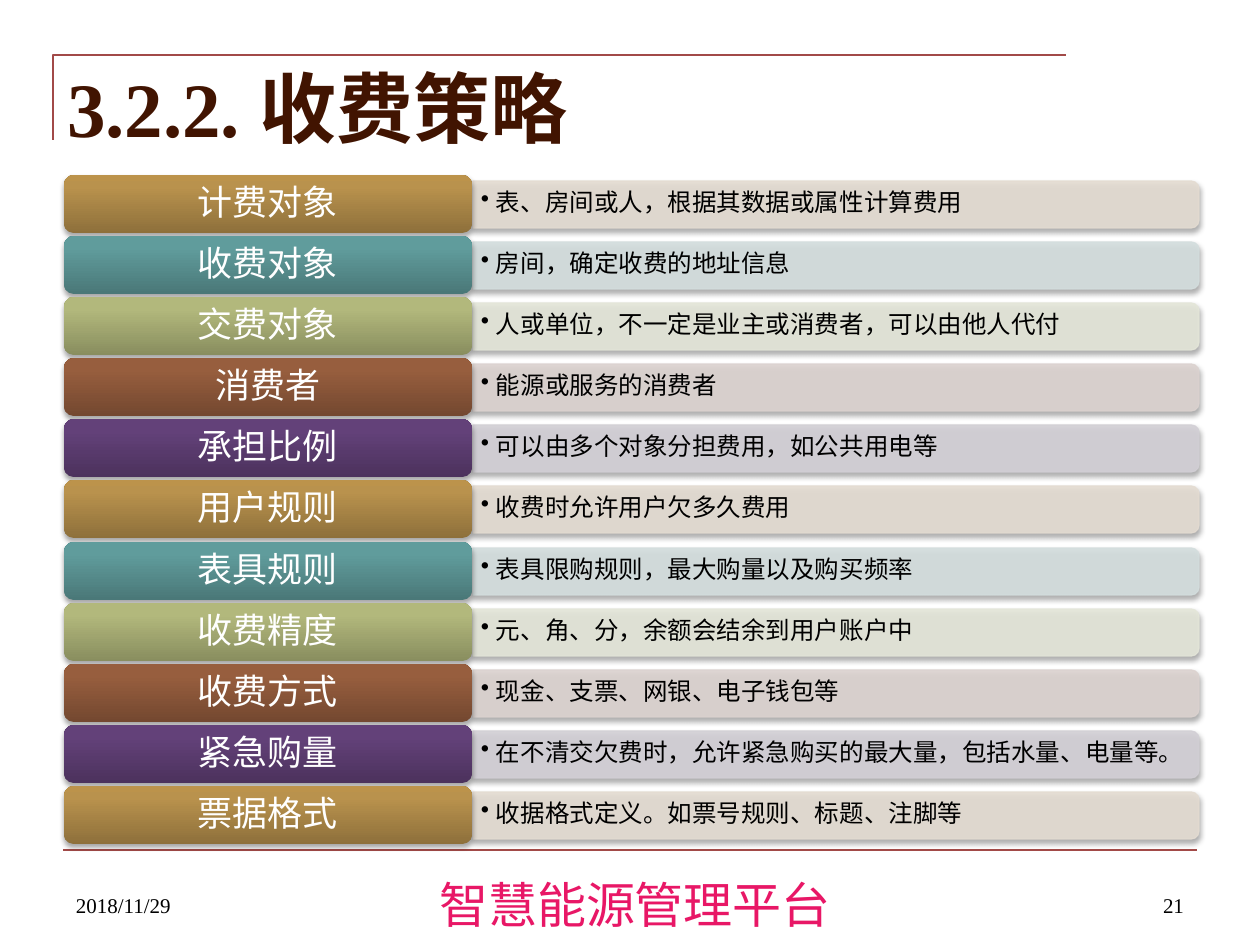
import pptx
import pptx.dml.color
import pptx.enum.shapes
import pptx.enum.text
import pptx.oxml
import pptx.oxml.ns
import pptx.util

EMU_PER_PX = 914400 / 126
SLIDE_WIDTH, SLIDE_HEIGHT = 1260, 945
FIRST_TOP, LAST_TOP = 175, 786
LABEL_LEFT, LABEL_WIDTH, LABEL_HEIGHT = 64, 408, 58
BAR_LEFT, BAR_WIDTH, BAR_HEIGHT, BAR_OFFSET = 473, 726, 47, 6

COLORS = {
    "rule": "A24A48", "title": "411401", "platform": "E81766",
    "black": "000000", "white": "FFFFFF",
}
THEMES = [
    {"bar": "E4DCD2", "label": {0: "8E703B", 80: "B9924D", 100: "BC934B"}},
    {"bar": "D4DEDE", "label": {0: "4A7878", 80: "609C9C", 100: "5F9E9E"}},
    {"bar": "E4E6D9", "label": {0: "898E5F", 80: "B2B87C", 100: "B4BA7B"}},
    {"bar": "DCD3D0", "label": {0: "744830", 80: "975E3E", 100: "995E3D"}},
    {"bar": "D3D0D6", "label": {0: "4C325D", 80: "634179", 100: "64417A"}},
]
STRATEGIES = [
    ("计费对象", "表、房间或人，根据其数据或属性计算费用"),
    ("收费对象", "房间，确定收费的地址信息"),
    ("交费对象", "人或单位，不一定是业主或消费者，可以由他人代付"),
    ("消费者", "能源或服务的消费者"),
    ("承担比例", "可以由多个对象分担费用，如公共用电等"),
    ("用户规则", "收费时允许用户欠多久费用"),
    ("表具规则", "表具限购规则，最大购量以及购买频率"),
    ("收费精度", "元、角、分，余额会结余到用户账户中"),
    ("收费方式", "现金、支票、网银、电子钱包等"),
    ("紧急购量", "在不清交欠费时，允许紧急购买的最大量，包括水量、电量等。"),
    ("票据格式", "收据格式定义。如票号规则、标题、注脚等"),
]
ALIGN = pptx.enum.text.PP_ALIGN
ANCHOR = pptx.enum.text.MSO_ANCHOR
SHAPE = pptx.enum.shapes.MSO_SHAPE


def px(length):
    return pptx.util.Emu(round(length * EMU_PER_PX))


def rgb(value):
    return pptx.dml.color.RGBColor.from_string(value)


def xml(markup):
    return pptx.oxml.parse_xml(markup.replace(">", f" {pptx.oxml.ns.nsdecls('a')}>", 1))


def write(frame, text, size, color, font="Arial", align=ALIGN.LEFT,
          anchor=ANCHOR.MIDDLE, margins=(13, 6), wrap=True, bold=False):
    frame.text = text
    frame.word_wrap = wrap
    frame.auto_size = pptx.enum.text.MSO_AUTO_SIZE.NONE
    frame.vertical_anchor = anchor
    frame.margin_left = frame.margin_right = px(margins[0])
    frame.margin_top = frame.margin_bottom = px(margins[1])
    paragraph = frame.paragraphs[0]
    paragraph.alignment = align
    for run in paragraph.runs:
        run.font.name = font
        run.font.size = pptx.util.Pt(size)
        run.font.bold = bold
        run.font.color.rgb = rgb(color)
    return paragraph


def add_text(slide, box, text, size, color, **style):
    caption = slide.shapes.add_textbox(*map(px, box))
    return write(caption.text_frame, text, size, color, **style)


def style_rule(rule):
    rule.line.color.rgb = rgb(COLORS["rule"])
    rule.line.width = pptx.util.Pt(1.5)


def add_frame(slide):
    builder = slide.shapes.build_freeform(px(53), px(140))
    builder.add_line_segments([(px(53), px(55)), (px(1066), px(55))], close=False)
    corner = builder.convert_to_shape()
    corner.fill.background()
    corner.shadow.inherit = False
    style_rule(corner)
    bottom = slide.shapes.add_connector(
        pptx.enum.shapes.MSO_CONNECTOR.STRAIGHT, px(63), px(850), px(1197), px(850))
    style_rule(bottom)
    bottom._element.spPr.append(xml("<a:effectLst></a:effectLst>"))


def add_shadow(shape):
    shape._element.spPr.append(xml(
        '<a:effectLst><a:outerShdw blurRad="39370" dist="22860" dir="5400000" rotWithShape="0">'
        '<a:srgbClr val="000000"><a:alpha val="35000"/></a:srgbClr></a:outerShdw></a:effectLst>'))


def add_bar(slide, top, color):
    center_x, center_y = BAR_LEFT + BAR_WIDTH / 2, top + BAR_HEIGHT / 2
    bar = slide.shapes.add_shape(
        SHAPE.ROUND_2_SAME_RECTANGLE,
        px(center_x - BAR_HEIGHT / 2), px(center_y - BAR_WIDTH / 2),
        px(BAR_HEIGHT), px(BAR_WIDTH))
    bar.rotation = 90
    bar.fill.solid()
    bar.fill.fore_color.rgb = rgb(color)
    bar.line.color.rgb = rgb(color)
    bar.line.width = pptx.util.Pt(0.75)
    for shade in bar._element.spPr.iter(pptx.oxml.ns.qn("a:srgbClr")):
        shade.append(xml('<a:alpha val="90000"></a:alpha>'))
    add_shadow(bar)


def add_detail(slide, top, text):
    paragraph = add_text(slide, (BAR_LEFT, top, BAR_WIDTH, BAR_HEIGHT - 2), text,
                         14, COLORS["black"], margins=(8, 4))
    paragraph.line_spacing = 0.9
    properties = paragraph._p.get_or_add_pPr()
    properties.set("marL", str(px(15)))
    properties.set("indent", str(px(-15)))
    properties.append(xml('<a:buChar char="•"></a:buChar>'))


def add_label(slide, top, text, stops):
    label = slide.shapes.add_shape(
        SHAPE.ROUNDED_RECTANGLE, px(LABEL_LEFT), px(top), px(LABEL_WIDTH), px(LABEL_HEIGHT))
    label.line.fill.background()
    stop_list = "".join(
        f'<a:gs pos="{position * 1000}"><a:srgbClr val="{color}"/></a:gs>'
        for position, color in stops.items())
    label._element.spPr.find(pptx.oxml.ns.qn("a:prstGeom")).addnext(xml(
        f'<a:gradFill><a:gsLst>{stop_list}</a:gsLst><a:lin ang="16200000" scaled="0"/></a:gradFill>'))
    add_shadow(label)
    paragraph = write(label.text_frame, text, 20, COLORS["white"], align=ALIGN.CENTER,
                      margins=(13, 8))
    paragraph.line_spacing = 0.9


def add_title(slide):
    title = slide.shapes.title
    title.left, title.top, title.width, title.height = map(px, (54, 58, 1144, 97))
    write(title.text_frame, "3.2.2. 收费策略", 44, COLORS["title"],
          font="Times New Roman", bold=True)


def add_footer(slide):
    add_text(slide, (441, 869, 388, 49), "智慧能源管理平台", 28, COLORS["platform"],
             font="Noto Sans CJK SC", align=ALIGN.CENTER, anchor=ANCHOR.TOP, wrap=False)
    for left, text, align in ((63, "2018/11/29", ALIGN.LEFT), (903, "21", ALIGN.RIGHT)):
        add_text(slide, (left, 861, 294, 63), text, 12, COLORS["black"],
                 font="Times New Roman", align=align, anchor=ANCHOR.BOTTOM)


def main():
    presentation = pptx.Presentation()
    presentation.slide_width, presentation.slide_height = px(SLIDE_WIDTH), px(SLIDE_HEIGHT)
    slide = presentation.slides.add_slide(presentation.slide_layouts[5])
    add_frame(slide)
    add_footer(slide)
    add_title(slide)
    pitch = (LAST_TOP - FIRST_TOP) / (len(STRATEGIES) - 1)
    for index, (name, detail) in enumerate(STRATEGIES):
        top = round(FIRST_TOP + index * pitch)
        theme = THEMES[index % len(THEMES)]
        add_bar(slide, top + BAR_OFFSET, theme["bar"])
        add_detail(slide, top + BAR_OFFSET, detail)
        add_label(slide, top, name, theme["label"])
    presentation.save("out.pptx")


if __name__ == "__main__":
    main()
